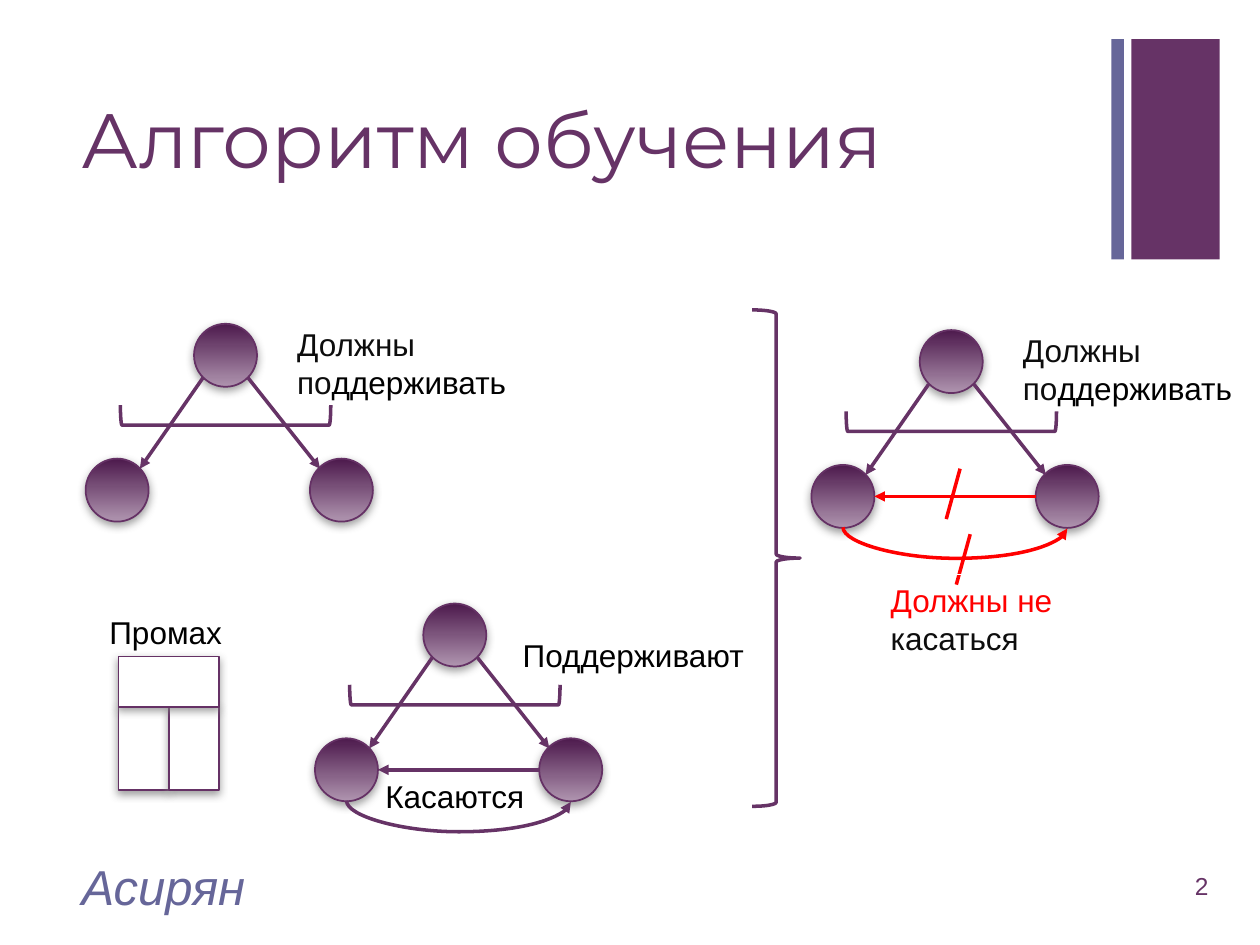
import pptx
import pptx.util
import pptx.dml.color
import pptx.enum.shapes
import pptx.enum.text
import pptx.oxml
import pptx.oxml.ns

In, Pt = pptx.util.Inches, pptx.util.Pt
SHAPE = pptx.enum.shapes.MSO_SHAPE
CONNECTOR = pptx.enum.shapes.MSO_CONNECTOR
ALIGN = pptx.enum.text.PP_ALIGN
MIDDLE = pptx.enum.text.MSO_ANCHOR.MIDDLE
A = 'xmlns:a="http://schemas.openxmlformats.org/drawingml/2006/main"'

PURPLE, BLUE, EDGE = "663366", "666699", "653165"
RED, BLACK, INK, WHITE = "FF0000", "000000", "0D0D0D", "FFFFFF"
NODE = 0.5                      # node diameter
SPAN, DROP = 1.78, 1.07         # from left node to right node, from top to base
SUPPORT = [("Должны \nпо", INK), ("ддерживать", BLACK)]


def rgb(color):
    return pptx.dml.color.RGBColor.from_string(color)


def xml(markup):
    return pptx.oxml.parse_xml(markup)


def shape(shapes, kind, box, fill=None, line=None, width=1, shadow=False):
    sp = shapes.add_shape(kind, *map(In, box))
    sp.shadow.inherit = False
    if isinstance(fill, tuple):
        sp.fill.gradient()
        sp.fill.gradient_angle = 270
        for i, color in enumerate(fill):
            stop = sp.fill.gradient_stops[i]
            stop.position, stop.color.rgb = i, rgb(color)
    elif fill:
        sp.fill.solid()
        sp.fill.fore_color.rgb = rgb(fill)
    else:
        sp.fill.background()
    if line:
        sp.line.color.rgb, sp.line.width = rgb(line), Pt(width)
    else:
        sp.line.fill.background()
    if shadow:
        sp._element.spPr.find(pptx.oxml.ns.qn("a:effectLst")).append(xml(
            f'<a:outerShdw {A} blurRad="{Pt(5)}" dist="{Pt(2)}" dir="5400000" '
            'rotWithShape="0"><a:srgbClr val="808080"><a:alpha val="75000"/>'
            '</a:srgbClr></a:outerShdw>'))
    return sp


def line(shapes, start, end, color=PURPLE, arrow=True, kind=CONNECTOR.STRAIGHT):
    c = shapes.add_connector(kind, *map(In, start + end))
    c.line.color.rgb, c.line.width = rgb(color), Pt(2)
    if arrow:
        c.line._get_or_add_ln().append(xml(f'<a:tailEnd {A} type="triangle"/>'))
    c._element.spPr.append(xml(f"<a:effectLst {A}/>"))
    return c


def write(tf, runs, size=18, color=BLACK, font="Arial", align=ALIGN.LEFT):
    """Fill the frame with one paragraph of (text, colour) runs."""
    tf.word_wrap = True
    p = tf.paragraphs[0]
    p.alignment = align
    p.font.size, p.font.name, p.font.color.rgb = Pt(size), font, rgb(color)
    for text, run_color in runs:
        for i, part in enumerate(text.split("\n")):
            if i:
                p.add_line_break()
            if part:
                r = p.add_run()
                r.text = part
                r.font.color.rgb = rgb(run_color)
    return p


def label(shapes, box, runs, **style):
    tf = shapes.add_textbox(*map(In, box)).text_frame
    return tf, write(tf, runs, **style)


def header(s, x, y, w, h):
    """Title with the two bars at its right."""
    shape(s.shapes, SHAPE.RECTANGLE, (x + w - 0.7, y, 0.7, h), PURPLE)
    shape(s.shapes, SHAPE.RECTANGLE, (x + w - 0.86, y, 0.1, h), BLUE)
    title = s.shapes.title
    title.left, title.top, title.width, title.height = map(
        In, (x, y + 0.22, w - 0.87, 1.22))
    title.text_frame.vertical_anchor = MIDDLE
    p = write(title.text_frame, [("Алгоритм обучения", PURPLE)], 44, PURPLE,
              "Montserrat")
    p.line_spacing = 0.9


def footer(s, x, y, w, h):
    """Author at the left, page number at the right."""
    tf, p = label(s.shapes, (x, y, 6.7, h), [("Асирян", BLUE)], size=28, color=BLUE)
    tf.vertical_anchor = MIDDLE
    p.font.italic = True
    tf, p = label(s.shapes, (x + w - 0.61, y, 0.61, h), [("2", PURPLE)], size=14,
                  color=PURPLE, align=ALIGN.RIGHT)
    tf.vertical_anchor = MIDDLE


def arch(s, x, y, runs, label_box):
    """Three nodes, two arrows, a bracket and a label."""
    shapes = s.shapes.add_group_shape().shapes
    for dx, dy in ((0.86, 0), (SPAN, DROP), (0, DROP)):
        shape(shapes, SHAPE.FLOWCHART_CONNECTOR, (x + dx, y + dy, NODE, NODE),
              ("4D1A4D", "AF94AF"), EDGE, shadow=True)
    for x1, x2 in ((0.93, 0.43), (1.29, 1.86)):
        line(shapes, (x + x1, y + 0.43), (x + x2, y + 1.15))
    bracket = shape(shapes, SHAPE.RIGHT_BRACKET, (x + 1.03, y - 0.11, 0.16, 1.67),
                    line=PURPLE, width=2)
    bracket.rotation = 90
    dx, dy, w, h = label_box
    label(shapes, (x + dx, y + dy, w, h), runs)


def contact(s, x, y, color):
    """Straight and curved arrows between the base nodes of an arch."""
    mid = y + DROP + NODE / 2
    line(s.shapes, (x + SPAN, mid), (x + NODE, mid), color)
    # The curve is a thin upright connector turned a quarter to the left
    rise, sag = 0.01, 0.25
    cx, cy = x + (SPAN + NODE) / 2, y + DROP + NODE
    c = line(s.shapes, (cx - rise / 2, cy - SPAN / 2),
             (cx + rise / 2, cy + SPAN / 2), color, kind=CONNECTOR.CURVE)
    spPr = c._element.spPr
    spPr.xfrm.set("rot", "16200000")
    spPr.xfrm.set("flipH", "1")
    spPr.prstGeom.get_or_add_avLst().append(xml(
        f'<a:gd {A} name="adj1" fmla="val {round(sag / rise * 100000)}"/>'))


def near_miss(s, x, y, w):
    """Two posts with a lintel, and the caption above."""
    for dx in (0, w / 2):
        shape(s.shapes, SHAPE.FLOWCHART_PROCESS, (x + dx, y + 0.39, w / 2, 0.67),
              WHITE, EDGE, shadow=True)
    shape(s.shapes, SHAPE.FLOWCHART_PROCESS, (x, y, w, 0.4), WHITE, EDGE, shadow=True)
    label(s.shapes, (x - 0.17, y - 0.39, 1.13, 0.4), [("Промах", BLACK)])


def forbidden(s, x, y):
    """Strokes through both contact arrows, with a warning."""
    for dx, dy in ((1.07, 1.1), (1.15, 1.62)):
        line(s.shapes, (x + dx + 0.11, y + dy), (x + dx, y + dy + 0.4), RED, arrow=False)
    sp = shape(s.shapes, SHAPE.RECTANGLE, (x + 0.53, y + 1.94, 2.99, 0.71),
               line=WHITE, width=0.75)
    sp.text_frame.vertical_anchor = pptx.enum.text.MSO_ANCHOR.TOP
    write(sp.text_frame, [("Должны не\n", RED), ("касаться", INK)])


def main():
    prs = pptx.Presentation()
    prs.slide_width, prs.slide_height = In(10), In(7.5)
    s = prs.slides.add_slide(prs.slide_layouts[5])
    header(s, 0.55, 0.31, 9.13, 1.75)
    footer(s, 0.55, 6.83, 9.14, 0.4)

    # Known model and the near miss
    support_box = (1.58, -0.04, 2.99, 0.71)
    arch(s, 0.68, 2.57, SUPPORT, support_box)
    near_miss(s, 0.94, 5.21, 0.8)
    x, y = 2.5, 4.79
    arch(s, x, y, [("Поддерживают", BLACK)], (1.55, 0.21, 2.61, 0.4))
    contact(s, x, y, PURPLE)
    label(s.shapes, (x + 0.46, y + 1.33, 1.41, 0.4), [("Касаются", BLACK)])

    # Resulting model
    shape(s.shapes, SHAPE.RIGHT_BRACE, (5.97, 2.46, 0.38, 3.94), line=PURPLE, width=2)
    x, y = 6.44, 2.62
    arch(s, x, y, SUPPORT, support_box)
    contact(s, x, y, RED)
    forbidden(s, x, y)
    prs.save("out.pptx")


if __name__ == "__main__":
    main()
